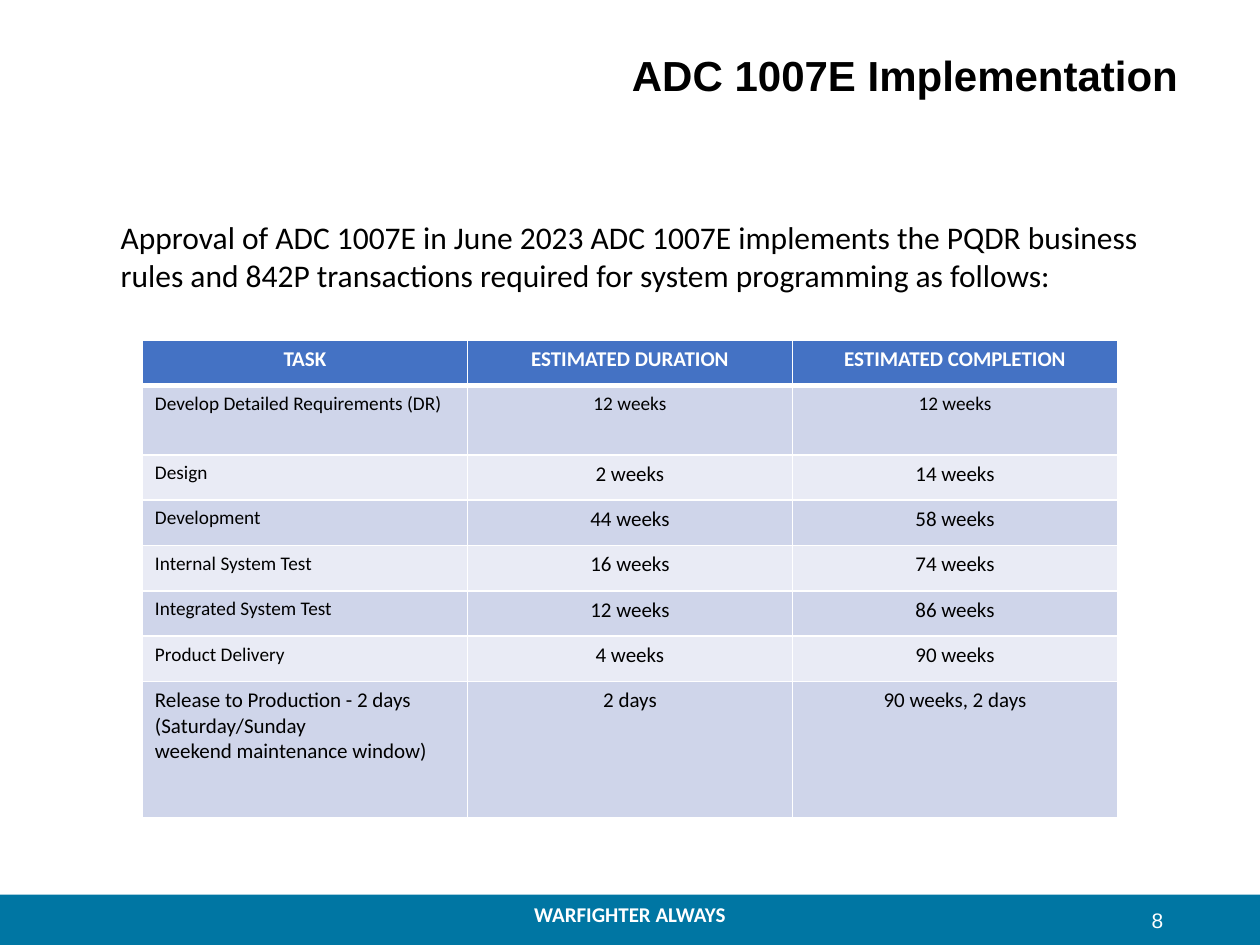
"""Build the ADC 1007E implementation schedule slide."""
from lxml import etree
from pptx import Presentation
from pptx import util as u
from pptx.dml.color import RGBColor
from pptx.enum import shapes, text
from pptx.oxml.ns import qn

TITLE = "ADC 1007E Implementation"
INTRO = ("Approval of ADC 1007E in June 2023 ADC 1007E implements the PQDR business "
         "rules and 842P transactions\u00a0required for system programming as follows:")
FOOTER = "WARFIGHTER ALWAYS"
PAGE = "8"
HEADERS = ("TASK", "ESTIMATED DURATION", "ESTIMATED COMPLETION")
TASKS = [
    ("Develop Detailed Requirements (DR)", "12 weeks", "12 weeks"),
    ("Design", "2 weeks", "14 weeks"),
    ("Development", "44 weeks", "58 weeks"),
    ("Internal System Test", "16 weeks", "74 weeks"),
    ("Integrated System Test", "12 weeks", "86 weeks"),
    ("Product Delivery", "4 weeks", "90 weeks"),
    ("Release to Production - 2 days (Saturday/Sunday\nweekend maintenance window)",
     "2 days", "90 weeks, 2\u00a0days"),
]
THEME = {
    "bar": "0076A3", "header": "4472C4", "bands": ("CFD5EA", "E9EBF5"),
    "ink": "000000", "light": "FFFFFF", "body": "Calibri", "head": "Arial",
    "title": 24, "intro": 18, "base": 12, "small": 11,
}
ROW_H, FIRST_H, LAST_H, COL_W = 0.36, 0.55, 1.08, 2.58
LEFT, CENTER, RIGHT = text.PP_ALIGN.LEFT, text.PP_ALIGN.CENTER, text.PP_ALIGN.RIGHT


def write(tf, content, size=THEME["base"], font=THEME["body"], color=THEME["ink"],
          bold=False, align=LEFT, anchor=text.MSO_ANCHOR.TOP):
    tf.word_wrap = True
    tf.vertical_anchor = anchor
    p = tf.paragraphs[0]
    p.alignment = align
    for i, line in enumerate(content.split("\n")):
        if i:
            p.add_line_break()
        r = p.add_run()
        r.text = line
        r.font.size, r.font.name, r.font.bold = u.Pt(size), font, bold
        r.font.color.rgb = RGBColor.from_string(color)


def add_text(s, box, content, **fmt):
    sp = s.shapes.add_textbox(*map(u.Inches, box))
    write(sp.text_frame, content, **fmt)


def fill_solid(obj, color):
    obj.fill.solid()
    obj.fill.fore_color.rgb = RGBColor.from_string(color)


def set_borders(cell, bottom):
    pr = cell._tc.get_or_add_tcPr()
    for i, (side, width) in enumerate(zip("LRTB", (1, 1, 1, bottom))):
        ln = etree.Element(qn(f"a:ln{side}"), w=str(u.Pt(width)))
        solid = etree.SubElement(ln, qn("a:solidFill"))
        etree.SubElement(solid, qn("a:srgbClr"), val=THEME["light"])
        pr.insert(i, ln)


def add_schedule(s):
    rows = [HEADERS, *TASKS]
    heights = [ROW_H, FIRST_H] + [ROW_H] * (len(TASKS) - 2) + [LAST_H]
    table = s.shapes.add_table(
        len(rows), len(HEADERS), u.Inches(1.13), u.Inches(2.7),
        u.Inches(COL_W * len(HEADERS)), u.Inches(sum(heights))).table
    for col in table.columns:
        col.width = u.Inches(COL_W)
    for i, (row, height) in enumerate(zip(rows, heights)):
        table.rows[i].height = u.Inches(height)
        header = i == 0
        for j, content in enumerate(row):
            cell = table.cell(i, j)
            small = i == 1 or (j == 0 and 0 < i < len(TASKS))
            fill_solid(cell, THEME["header"] if header else THEME["bands"][(i - 1) % 2])
            set_borders(cell, 3 if header else 1)
            write(cell.text_frame, content, bold=header,
                  size=THEME["small" if small else "base"],
                  color=THEME["light" if header else "ink"],
                  align=CENTER if header or j else LEFT)


def main():
    prs = Presentation()
    prs.slide_width, prs.slide_height = u.Inches(10), u.Inches(7.5)
    s = prs.slides.add_slide(prs.slide_layouts[5])

    bar = s.shapes.add_shape(shapes.MSO_SHAPE.RECTANGLE, 0, u.Inches(7.1),
                             prs.slide_width, u.Inches(0.4))
    bar.shadow.inherit = False
    fill_solid(bar, THEME["bar"])
    bar.line.fill.background()
    add_text(s, (0, 7.11, 10, 0.3), FOOTER, color=THEME["light"], bold=True, align=CENTER)

    title = s.shapes.title
    title.left, title.top, title.width, title.height = map(u.Inches, (4.16, 0.06, 5.76, 0.9))
    tf = title.text_frame
    tf.margin_top, tf.margin_right = u.Inches(0.22), u.Inches(0.57)
    write(tf, TITLE, size=THEME["title"], font=THEME["head"], bold=True,
          align=RIGHT, anchor=text.MSO_ANCHOR.MIDDLE)

    add_text(s, (7.08, 7.1, 2.25, 0.4), PAGE, font=THEME["head"], color=THEME["light"],
             align=RIGHT, anchor=text.MSO_ANCHOR.MIDDLE)
    add_schedule(s)
    add_text(s, (0.86, 1.68, 8.32, 0.71), INTRO, size=THEME["intro"])
    prs.save("out.pptx")


if __name__ == "__main__":
    main()
